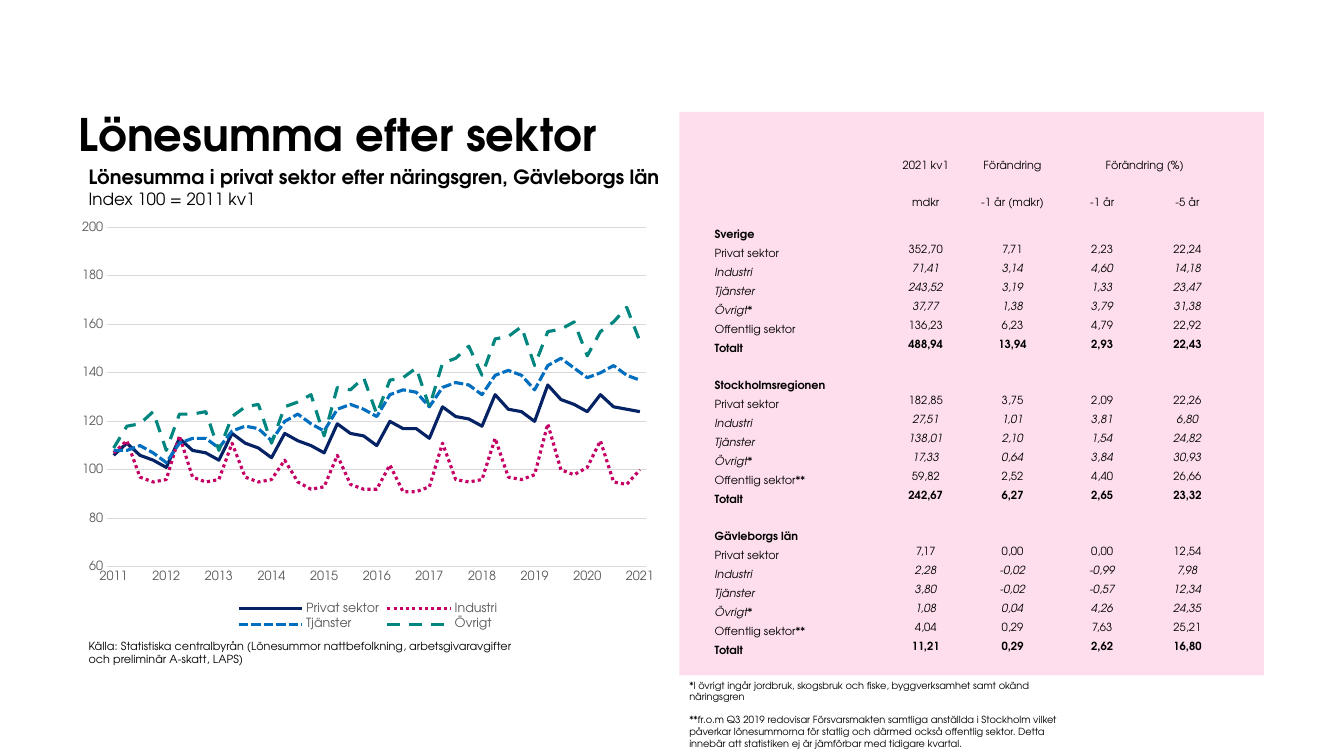
from dataclasses import dataclass

import pptx
import pptx.chart.data
import pptx.dml.color
import pptx.enum.chart
import pptx.enum.dml
import pptx.enum.shapes
import pptx.enum.text
import pptx.oxml
import pptx.oxml.ns
import pptx.util

Pt = pptx.util.Pt
Anchor = pptx.enum.text.MSO_ANCHOR
Align = pptx.enum.text.PP_ALIGN
Dash = pptx.enum.dml.MSO_LINE
FONT = "TeX Gyre Adventor"
BLACK, GREY, GRID, PINK = "000000", "595959", "D9D9D9", "FEDEED"


@dataclass(frozen=True)
class Box:
    left: float
    top: float
    width: float
    height: float

    def lengths(self) -> tuple:
        return Pt(self.left), Pt(self.top), Pt(self.width), Pt(self.height)


@dataclass(frozen=True)
class Series:
    name: str
    colour: str
    dash: object
    values: tuple


@dataclass(frozen=True)
class Region:
    name: str
    public_mark: str
    figures: tuple


SERIES = [
    Series("Privat sektor", "052364", None, (
        106, 111, 106, 104, 101, 113, 108, 107, 104, 115, 111, 109, 105, 115, 112, 110, 107, 119, 115, 114, 110,
        120, 117, 117, 113, 126, 122, 121, 118, 131, 125, 124, 120, 135, 129, 127, 124, 131, 126, 125, 124)),
    Series("Industri", "C40064", Dash.ROUND_DOT, (
        107, 112, 97, 95, 96, 114, 97, 95, 96, 111, 97, 95, 96, 104, 95, 92, 93, 106, 94, 92, 92,
        102, 91, 91, 93, 111, 96, 95, 96, 113, 97, 96, 98, 119, 100, 98, 101, 112, 95, 94, 100)),
    Series("Tjänster", "006EBF", Dash.SQUARE_DOT, (
        108, 108, 110, 107, 103, 111, 113, 113, 109, 116, 118, 117, 112, 120, 123, 119, 116, 125, 127, 125, 122,
        131, 133, 132, 126, 134, 136, 135, 131, 139, 141, 139, 133, 143, 146, 142, 138, 140, 143, 139, 137)),
    Series("Övrigt", "00867F", Dash.DASH, (
        109, 118, 119, 124, 108, 123, 123, 124, 108, 122, 126, 127, 111, 126, 128, 131, 114, 134, 133, 138, 123,
        137, 138, 142, 126, 144, 146, 151, 139, 154, 155, 159, 143, 157, 158, 161, 147, 157, 161, 167, 153)),
]
SECTORS = ["Privat sektor", "Industri", "Tjänster", "Övrigt*", "Offentlig sektor", "Totalt"]
ITALIC_SECTORS = SECTORS[1:4]
REGIONS = [
    Region("Sverige", "", (
        "352,70 7,71 2,23 22,24", "71,41 3,14 4,60 14,18", "243,52 3,19 1,33 23,47",
        "37,77 1,38 3,79 31,38", "136,23 6,23 4,79 22,92", "488,94 13,94 2,93 22,43")),
    Region("Stockholmsregionen", "**", (
        "182,85 3,75 2,09 22,26", "27,51 1,01 3,81 6,80", "138,01 2,10 1,54 24,82",
        "17,33 0,64 3,84 30,93", "59,82 2,52 4,40 26,66", "242,67 6,27 2,65 23,32")),
    Region("Gävleborgs län", "**", (
        "7,17 0,00 0,00 12,54", "2,28 -0,02 -0,99 7,98", "3,80 -0,02 -0,57 12,34",
        "1,08 0,04 4,26 24,35", "4,04 0,29 7,63 25,21", "11,21 0,29 2,62 16,80")),
]


def colour(value: str):
    return pptx.dml.color.RGBColor.from_string(value)


def set_font(font, size: float, value: str = BLACK, bold: bool = False, italic: bool = False) -> None:
    font.name, font.size, font.bold, font.italic = FONT, Pt(size), bold, italic
    font.color.rgb = colour(value)


def add_run(paragraph, text: str, size: float, bold: bool = False, italic: bool = False) -> None:
    run = paragraph.add_run()
    run.text = text
    set_font(run.font, size, bold=bold, italic=italic)


def add_text_frame(slide, box: Box):
    text_frame = slide.shapes.add_textbox(*box.lengths()).text_frame
    text_frame.word_wrap = True
    return text_frame


def fill_cell(cell, text: str, anchor, alignment, bold: bool = False, italic: bool = False) -> None:
    cell.vertical_anchor = anchor
    paragraph = cell.text_frame.paragraphs[0]
    paragraph.alignment = alignment
    add_run(paragraph, text, 8, bold, italic)


def add_wage_table(slide, box: Box) -> None:
    block = len(SECTORS) + 1
    row_count = 2 + block * len(REGIONS)
    table = slide.shapes.add_table(row_count, 5, *box.lengths()).table
    table.first_row = table.horz_banding = False
    for column, width in zip(table.columns, (123, 57, 67, 61, 61)):
        column.width = Pt(width)
    for index, row in enumerate(table.rows):
        tall = index < 2 or (index - 2) % block == 0
        row.height = Pt(22.8 if index == 2 else 26.5 if tall else 13.6)
        for cell in row.cells:
            cell.fill.background()
            cell.margin_left = cell.margin_right = cell.margin_top = Pt(0.7)
            cell.margin_bottom = Pt(0)

    # Column headings
    headings = [["2021 kv1", "Förändring", "Förändring (%)"], ["mdkr", "-1 år (mdkr)", "-1 år", "-5 år"]]
    table.cell(0, 3).merge(table.cell(0, 4))
    for row, texts in enumerate(headings):
        for column, text in enumerate(texts, 1):
            fill_cell(table.cell(row, column), text, Anchor.BOTTOM, Align.CENTER)

    # One block of rows per region
    for number, region in enumerate(REGIONS):
        top = 2 + number * block
        fill_cell(table.cell(top, 0), region.name, Anchor.BOTTOM, Align.LEFT, bold=True)
        for row, (sector, figures) in enumerate(zip(SECTORS, region.figures), top + 1):
            bold, italic = sector == "Totalt", sector in ITALIC_SECTORS
            label = sector + region.public_mark if sector == "Offentlig sektor" else sector
            fill_cell(table.cell(row, 0), label, Anchor.BOTTOM, Align.LEFT, bold, italic)
            for column, figure in enumerate(figures.split(), 1):
                fill_cell(table.cell(row, column), figure, Anchor.MIDDLE, Align.CENTER, bold, italic)

    # Small type in empty cells, and a table style without grid
    for row in table.rows:
        for cell in row.cells:
            if not cell.text_frame.text:
                cell.text_frame.paragraphs[0]._p.get_or_add_endParaRPr().set("sz", "800")
    style = table._tbl.tblPr.find(pptx.oxml.ns.qn("a:tableStyleId"))
    style.text = "{2D5ABB26-0587-4C30-8999-92F81FD0307C}"


def manual_layout(x: float, y: float, width: float, height: float, target: str = ""):
    return pptx.oxml.parse_xml(
        f'<c:layout {pptx.oxml.ns.nsdecls("c")}><c:manualLayout>{target}'
        '<c:xMode val="edge"/><c:yMode val="edge"/>'
        f'<c:x val="{x}"/><c:y val="{y}"/><c:w val="{width}"/><c:h val="{height}"/>'
        '</c:manualLayout></c:layout>')


def add_index_chart(slide, box: Box) -> None:
    data = pptx.chart.data.CategoryChartData(number_format="0")
    data.categories = ["" if i % 4 else str(2011 + i // 4) for i in range(41)]
    for series in SERIES:
        data.add_series(series.name, series.values)
    chart = slide.shapes.add_chart(pptx.enum.chart.XL_CHART_TYPE.LINE, *box.lengths(), data).chart
    chart.has_title = False
    set_font(chart.font, 10)
    for line, series in zip(chart.plots[0].series, SERIES):
        line.smooth = False
        line.marker.style = pptx.enum.chart.XL_MARKER_STYLE.NONE
        line.format.line.color.rgb = colour(series.colour)
        line.format.line.width = Pt(2.25)
        line.format.line.dash_style = series.dash

    # Axes
    years, index_axis = chart.category_axis, chart.value_axis
    for axis in (years, index_axis):
        axis.major_tick_mark = axis.minor_tick_mark = pptx.enum.chart.XL_TICK_MARK.NONE
        set_font(axis.tick_labels.font, 9, GREY)
    index_axis.minimum_scale, index_axis.maximum_scale, index_axis.major_unit = 60, 200, 20
    index_axis.format.line.fill.background()
    for line in (years.format.line, index_axis.major_gridlines.format.line):
        line.color.rgb = colour(GRID)
        line.width = Pt(0.75)
    years._element.find(".//" + pptx.oxml.ns.qn("a:bodyPr")).set("rot", "-60000000")
    years._element.find(pptx.oxml.ns.qn("c:lblOffset")).addnext(
        pptx.oxml.parse_xml(f'<c:tickLblSkip {pptx.oxml.ns.nsdecls("c")} val="1"/>'))

    # Legend and plot area positions
    chart.has_legend = True
    chart.legend.position = pptx.enum.chart.XL_LEGEND_POSITION.BOTTOM
    chart.legend.include_in_layout = False
    set_font(chart.legend.font, 9, GREY)
    chart.legend._element.find(pptx.oxml.ns.qn("c:legendPos")).addnext(manual_layout(0.27, 0.92, 0.46, 0.08))
    plot_area = chart._chartSpace.chart.plotArea
    for layout in plot_area.findall(pptx.oxml.ns.qn("c:layout")):
        plot_area.remove(layout)
    plot_area.insert(0, manual_layout(0.06, 0.03, 0.91, 0.81, '<c:layoutTarget val="inner"/>'))


def main() -> None:
    presentation = pptx.Presentation()
    presentation.slide_width, presentation.slide_height = Pt(960), Pt(540)
    slide = presentation.slides.add_slide(presentation.slide_layouts[6])

    # Title
    title = add_text_frame(slide, Box(56.2, 26.6, 663.8, 87.8))
    title.margin_left = title.margin_right = title.margin_top = title.margin_bottom = Pt(0)
    title.vertical_anchor = Anchor.BOTTOM
    add_run(title.paragraphs[0], "Lönesumma efter sektor", 32, bold=True)

    # Source line
    source = add_text_frame(slide, Box(56.2, 452.9, 317.5, 26.6))
    add_run(source.paragraphs[0], "Källa: Statistiska centralbyrån (Lönesummor nattbefolkning, "
            "arbetsgivaravgifter och preliminär A-skatt, LAPS)", 8)

    # Pink panel
    panel = slide.shapes.add_shape(pptx.enum.shapes.MSO_SHAPE.RECTANGLE, *Box(485.3, 79.9, 417.6, 402.5).lengths())
    panel.shadow.inherit = False
    panel.fill.solid()
    panel.fill.fore_color.rgb = colour(PINK)
    panel.line.fill.background()

    # Chart heading
    heading = add_text_frame(slide, Box(56.2, 114.5, 428.4, 38.9)).paragraphs[0]
    add_run(heading, "Lönesumma i privat sektor efter näringsgren, Gävleborgs län", 14, bold=True)
    heading.add_line_break()
    add_run(heading, "Index 100 = 2011 kv1", 12)

    add_wage_table(slide, Box(509.8, 95.8, 369, 369.4))

    # Footnotes
    notes = add_text_frame(slide, Box(485.3, 481.7, 280.8, 58.3))
    add_run(notes.paragraphs[0], "*I övrigt ingår jordbruk, skogsbruk och fiske, byggverksamhet "
            "samt okänd näringsgren", 7)
    public_note = notes.add_paragraph()
    public_note.space_before = Pt(8)
    add_run(public_note, "**fr.o.m Q3 2019 redovisar Försvarsmakten samtliga anställda i Stockholm vilket påverkar "
            "lönesummorna för statlig och därmed också offentlig sektor. Detta innebär att statistiken "
            "ej är jämförbar med tidigare kvartal.", 7)

    add_index_chart(slide, Box(51.1, 153.4, 423.4, 299.5))
    presentation.save("out.pptx")


if __name__ == "__main__":
    main()
